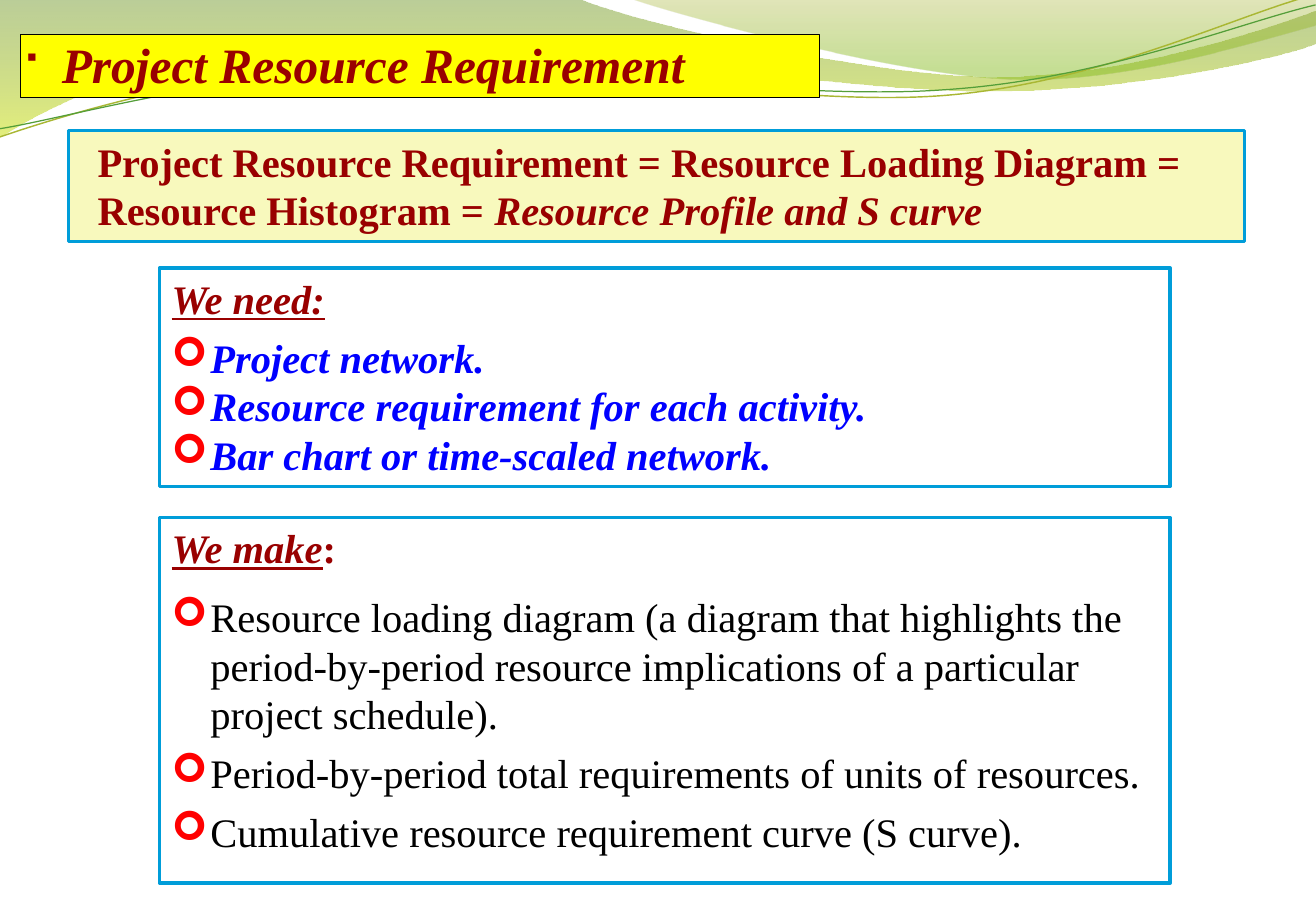
"""Slide on project resource requirements, with a green wave header."""
from lxml import etree
from pptx import Presentation
from pptx.dml.color import RGBColor
from pptx.enum.shapes import MSO_SHAPE
from pptx.enum.text import MSO_ANCHOR, PP_ALIGN
from pptx.oxml.ns import qn
from pptx.util import Pt

RECT = MSO_SHAPE.RECTANGLE
TOP = MSO_ANCHOR.TOP
LEFT, JUSTIFY = PP_ALIGN.LEFT, PP_ALIGN.JUSTIFY

FONT, BULLET_FONT = "Times New Roman", "Wingdings"
MAROON, RED, BLUE, BLACK = "990000", "FF0000", "0000FF", "000000"
CYAN, WHITE = "009DD9", "FFFFFF"

# Two numbers make a line, six a cubic curve.
WAVES = [
    ([(0, 0), (343.4, -0.7), (370.8, 12.2, 517.7, 45.4, 591.1, 45.4),
      (665.3, 45.4, 747.4, 18.7, 779.8, 6.5), (780.5, 25.9),
      (766.8, 31.7, 678.2, 54.7, 581.8, 54), (484.6, 54, 297.4, 20.2, 200.2, 24.5),
      (100.8, 25.9, 35.3, 59.8, -0.7, 81.4), (0, 0)],
     [(0, "69921C", 45), (1, "CCE10F", 55)]),
    ([(373.7, -0.7), (396.7, 7.9, 531.4, 44.6, 599, 46.8),
      (667.4, 49.7, 749.5, 23, 779.8, 15.1), (779.8, 0), (373.7, -0.7)],
     [(0, "9BAA1A", 30), (0.8, "81BA16", 45)]),
]
STRANDS = [
    ([(-0.7, 81.4), (37.4, 68.4, 123.1, 41.8, 215.3, 38.2),
      (308.2, 33.8, 461.5, 63.4, 555.8, 56.9), (649.4, 50.4, 731.5, 9.4, 778.3, -2.9)],
     "A9B733", 0.85),
    ([(0, 76.3), (36.7, 70.6, 127.4, 44.6, 220.3, 41),
      (313.9, 37.4, 469.4, 59.8, 558.7, 53.3), (652.3, 47.5, 733.7, 13.7, 779.8, 2.9)],
     "549E39", 0.75),
]

TITLE = [("■", MAROON, 24.5, 0, [("Project Resource Requirement", MAROON, "bi")])]
SYNONYMS = [(None, None, 0, 0, [
    ("Project Resource Requirement = Resource Loading Diagram = Resource Histogram = ",
     MAROON, "b"),
    ("Resource Profile and S curve", MAROON, "bi")])]
NEED = [(None, None, 0, 6, [("We need:", MAROON, "biu")])] + [
    ("➢", RED, 23, 0, [(text, BLUE, "bi")]) for text in (
        "Project network.",
        "Resource requirement for each activity.",
        "Bar chart or time-scaled network.")]
MAKE = [(None, None, 0, 12, [("We make", MAROON, "biu"), (":", MAROON, "b")])] + [
    ("➢", RED, 23, 6, [(text, BLACK, "")]) for text in (
        "Resource loading diagram (a diagram that highlights the period-by-period "
        "resource implications of a particular project schedule).",
        "Period-by-period total requirements of units of resources.",
        "Cumulative resource requirement curve (S curve).")]

INSETS = (7.2, 3.6, 7.2, 3.6)
BOXES = [
    ((12.2, 20.4, 473.5, 37.6), "FFFF00", BLACK, 0.75, (0, 0, 0, 0), LEFT, 29.3, TITLE),
    ((40.5, 77.5, 697, 65.5), "F8F9BD", CYAN, 2, (17.3, 3.6, 7.2, 3.6), LEFT, 24, SYNONYMS),
    ((94.6, 158.8, 599, 129.6), WHITE, CYAN, 2, INSETS, JUSTIFY, 24, NEED),
    ((94.6, 306.7, 599, 216.7), WHITE, CYAN, 2, (7.2, 3.6, 7.2, 14.4), LEFT, 24, MAKE),
]


def rgb(code):
    return RGBColor.from_string(code)


def add_path(s, path):
    points = [(Pt(step[i]), Pt(step[i + 1])) for step in path for i in range(0, len(step), 2)]
    builder = s.shapes.build_freeform(*points[0])
    builder.add_line_segments(points[1:], close=path[0] == path[-1])
    sp = builder.convert_to_shape()
    sp.shadow.inherit = False
    segments = iter(list(sp.element.iter(qn("a:lnTo"))))
    for step in path[1:]:
        first = next(segments)
        if len(step) == 6:
            first.tag = qn("a:cubicBezTo")
            for segment in (next(segments), next(segments)):
                first.append(segment[0])
                segment.getparent().remove(segment)
    return sp


def add_wave(s, path, stops):
    sp = add_path(s, path)
    sp.line.fill.background()
    sp.fill.gradient()
    sp.fill.gradient_angle = 270
    for stop, (position, color, _) in zip(sp.fill.gradient_stops, stops):
        stop.position = position
        stop.color.rgb = rgb(color)
    for clr, (_, _, alpha) in zip(sp.element.spPr.iter(qn("a:srgbClr")), stops):
        etree.SubElement(clr, qn("a:alpha"), val=str(alpha * 1000))


def add_strand(s, path, color, width):
    sp = add_path(s, path)
    sp.fill.background()
    sp.line.color.rgb = rgb(color)
    sp.line.width = Pt(width)


def set_bullet(p, char, color, indent):
    pPr = p._p.get_or_add_pPr()
    pPr.set("marL", str(Pt(indent)))
    pPr.set("indent", str(-Pt(indent)))
    buClr = etree.SubElement(pPr, qn("a:buClr"))
    etree.SubElement(buClr, qn("a:srgbClr"), val=color)
    etree.SubElement(pPr, qn("a:buFont"), typeface=BULLET_FONT)
    etree.SubElement(pPr, qn("a:buChar"), char=char)


def add_box(s, place, fill, line, width, insets, align, size, paragraphs):
    sp = s.shapes.add_shape(RECT, *map(Pt, place))
    sp.shadow.inherit = False
    sp.fill.solid()
    sp.fill.fore_color.rgb = rgb(fill)
    sp.line.color.rgb = rgb(line)
    sp.line.width = Pt(width)
    tf = sp.text_frame
    tf.word_wrap = True
    tf.vertical_anchor = TOP
    tf.margin_left, tf.margin_top, tf.margin_right, tf.margin_bottom = map(Pt, insets)
    for i, (char, color, indent, after, runs) in enumerate(paragraphs):
        p = tf.add_paragraph() if i else tf.paragraphs[0]
        if char:
            set_bullet(p, char, color, indent)
        p.alignment = align
        p.space_after = Pt(after)
        for text, ink, style in runs:
            r = p.add_run()
            r.text = text
            r.font.name = FONT
            r.font.size = Pt(size)
            r.font.color.rgb = rgb(ink)
            r.font.bold = "b" in style
            r.font.italic = "i" in style
            r.font.underline = "u" in style


def main():
    prs = Presentation()
    prs.slide_width, prs.slide_height = Pt(780), Pt(540)
    s = prs.slides.add_slide(prs.slide_layouts[6])
    for wave in WAVES:
        add_wave(s, *wave)
    for strand in STRANDS:
        add_strand(s, *strand)
    for box in BOXES:
        add_box(s, *box)
    prs.save("out.pptx")


if __name__ == "__main__":
    main()
